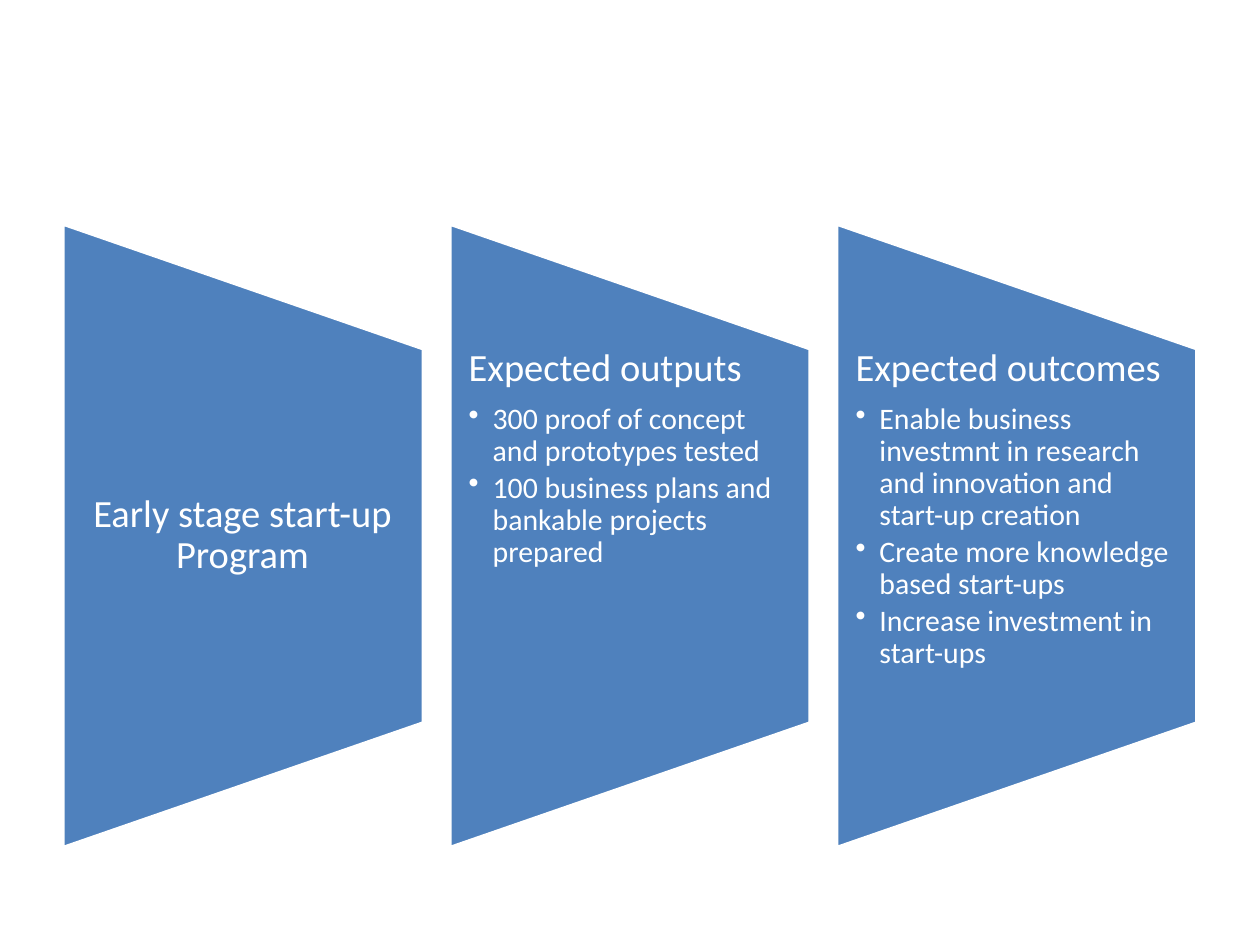
import pptx
import pptx.dml.color
import pptx.enum.shapes
import pptx.enum.text
import pptx.oxml.ns
import pptx.util
from lxml import etree

BLUE = pptx.dml.color.RGBColor(0x4F, 0x81, 0xBD)
WHITE = pptx.dml.color.RGBColor(0xFF, 0xFF, 0xFF)

ALIGN = pptx.enum.text.PP_ALIGN
ANCHOR = pptx.enum.text.MSO_ANCHOR
Inches = pptx.util.Inches
Pt = pptx.util.Pt

# Each panel: heading and its bullet points
PANELS = [
    ("Early stage start-up Program", []),
    ("Expected outputs", [
        "300 proof of concept and prototypes tested",
        "100 business plans and bankable projects prepared",
    ]),
    ("Expected outcomes", [
        "Enable business investmnt in research and innovation and start-up creation",
        "Create more knowledge based start-ups",
        "Increase investment in start-ups",
    ]),
]


def apply_format(target, values):
    for name, value in values.items():
        setattr(target, name, value)


class PanelSlide:
    """Style and current slide; lengths are shares of the slide's size."""

    margin, gap = 0.05, 0.021
    panel_top, panel_height = 0.237, 0.66
    text_share = 0.6  # part of a panel's height that holds its text
    heading_size, bullet_size = 22, 17
    hanging = Inches(0.19)
    frame_format = {
        "word_wrap": True,
        "margin_left": Inches(0.15), "margin_right": Inches(0.16),
        "margin_top": 0, "margin_bottom": 0,
    }

    def __init__(self, deck, columns):
        self.width, self.height = deck.slide_width, deck.slide_height
        self.slide = deck.slides.add_slide(deck.slide_layouts[6])
        self.column_width = (1 - 2 * self.margin - (columns - 1) * self.gap) / columns

    def column_left(self, column):
        return self.margin + column * (self.column_width + self.gap)

    def panel(self, column):
        # Turned a quarter to the left, so length and breadth swap about the centre
        length = self.panel_height * self.height
        breadth = self.column_width * self.width
        centre_x = self.column_left(column) * self.width + breadth / 2
        centre_y = self.panel_top * self.height + length / 2
        trapezoid = self.slide.shapes.add_shape(
            pptx.enum.shapes.MSO_SHAPE.FLOWCHART_MANUAL_OPERATION,
            int(centre_x - length / 2), int(centre_y - breadth / 2),
            int(length), int(breadth))
        trapezoid.rotation = 270
        trapezoid.shadow.inherit = False
        trapezoid.fill.solid()
        trapezoid.fill.fore_color.rgb = BLUE
        trapezoid.line.color.rgb = WHITE
        trapezoid.line.width = Pt(2)

    def panel_text(self, column, heading, points):
        text_height = self.panel_height * self.text_share
        text_top = self.panel_top + (self.panel_height - text_height) / 2
        frame = self.slide.shapes.add_textbox(
            int(self.column_left(column) * self.width), int(text_top * self.height),
            int(self.column_width * self.width), int(text_height * self.height)).text_frame
        apply_format(frame, self.frame_format)
        frame.vertical_anchor = ANCHOR.TOP if points else ANCHOR.MIDDLE
        title = frame.paragraphs[0]
        self.paragraph(title, heading, self.heading_size, 0.35)
        title.alignment = ALIGN.LEFT if points else ALIGN.CENTER
        for point in points:
            item = frame.add_paragraph()
            item.level = 1
            self.paragraph(item, point, self.bullet_size, 0.15)
            self.bullet(item)

    def paragraph(self, paragraph, text, size, space_share):
        apply_format(paragraph, {"line_spacing": 0.9, "space_after": Pt(size * space_share)})
        run = paragraph.add_run()
        run.text = text
        apply_format(run.font, {"name": "Calibri", "size": Pt(size)})
        run.font.color.rgb = WHITE

    def bullet(self, paragraph):
        properties = paragraph._p.get_or_add_pPr()
        properties.set("marL", str(self.hanging))
        properties.set("indent", str(-self.hanging))
        mark = etree.SubElement(properties, pptx.oxml.ns.qn("a:buChar"))
        mark.set("char", "•")


def main():
    deck = pptx.Presentation()
    deck.slide_width, deck.slide_height = Inches(10), Inches(7.5)
    program = PanelSlide(deck, len(PANELS))
    for column, (heading, points) in enumerate(PANELS):
        program.panel(column)
        program.panel_text(column, heading, points)
    deck.save("out.pptx")


if __name__ == "__main__":
    main()
